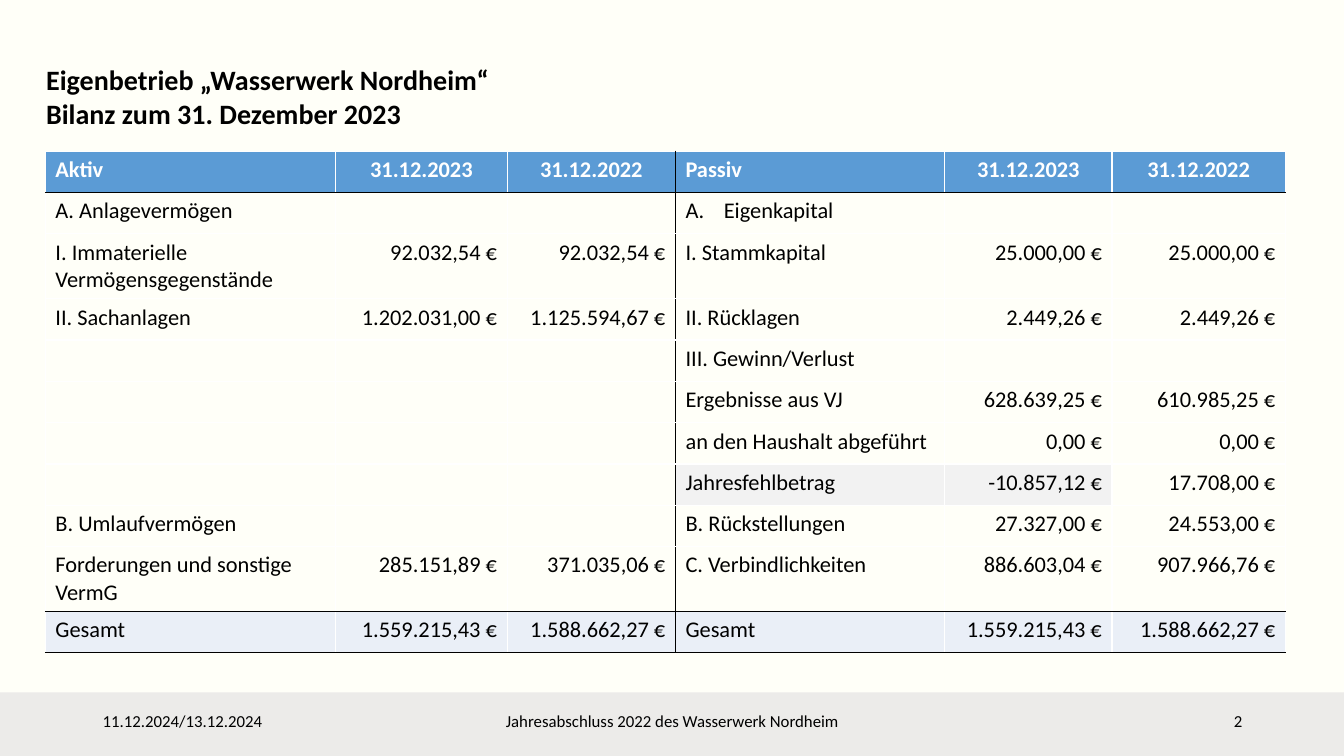
from lxml import etree
from pptx import Presentation
from pptx.dml.color import RGBColor
from pptx.enum.shapes import MSO_SHAPE
from pptx.enum.text import MSO_ANCHOR, MSO_AUTO_SIZE, PP_ALIGN
from pptx.oxml.ns import qn
from pptx.util import Inches, Pt

LEFT, CENTER, RIGHT = PP_ALIGN.LEFT, PP_ALIGN.CENTER, PP_ALIGN.RIGHT
TOP, MIDDLE = MSO_ANCHOR.TOP, MSO_ANCHOR.MIDDLE
GROW = MSO_AUTO_SIZE.SHAPE_TO_FIT_TEXT
RECTANGLE = MSO_SHAPE.RECTANGLE

COLORS = {
    "background": "FFFFF8",
    "footer": "E7E6E6",
    "header": "5B9BD5",
    "total": "EAEFF7",
    "highlight": "F2F2F2",
    "black": "000000",
    "white": "FFFFFF",
}
TITLE = ["Eigenbetrieb „Wasserwerk Nordheim“", "Bilanz zum 31. Dezember 2023"]
FOOTERS = [
    (0.92, 3, "11.12.2024/13.12.2024", LEFT),
    (4.42, 4.5, "Jahresabschluss 2022 des Wasserwerk Nordheim", CENTER),
    (9.42, 3, "2", RIGHT),
]
COL_WIDTHS = [2.88, 1.7, 1.67, 2.67, 1.66, 1.72]
ROW_HEIGHT = 0.41
LABEL_COLS = (0, 3)
PASSIV_COL = 3
NUMBERED_CELL = (1, 3)
HIGHLIGHT_CELLS = [(7, 3), (7, 4)]
BALANCE = [
    ["Aktiv", "31.12.2023", "31.12.2022", "Passiv", "31.12.2023", "31.12.2022"],
    ["A. Anlagevermögen", "", "", "Eigenkapital", "", ""],
    ["I. Immaterielle Vermögensgegenstände", "92.032,54 €", "92.032,54 €",
     "I. Stammkapital", "25.000,00 €", "25.000,00 €"],
    ["II. Sachanlagen", "1.202.031,00 €", "1.125.594,67 €",
     "II. Rücklagen", "2.449,26 €", "2.449,26 €"],
    ["", "", "", "III. Gewinn/Verlust", "", ""],
    ["", "", "", "Ergebnisse aus VJ", "628.639,25 €", "610.985,25 €"],
    ["", "", "", "an den Haushalt abgeführt", "0,00 €", "0,00 €"],
    ["", "", "", "Jahresfehlbetrag", "-10.857,12 €", "17.708,00 €"],
    ["B. Umlaufvermögen", "", "", "B. Rückstellungen", "27.327,00 €", "24.553,00 €"],
    ["Forderungen und sonstige VermG", "285.151,89 €", "371.035,06 €",
     "C. Verbindlichkeiten", "886.603,04 €", "907.966,76 €"],
    ["Gesamt", "1.559.215,43 €", "1.588.662,27 €",
     "Gesamt", "1.559.215,43 €", "1.588.662,27 €"],
]
LAST_ROW = len(BALANCE) - 1


def rgb(name):
    return RGBColor.from_string(COLORS[name])


def write(p, text, size, color="black", bold=False, align=LEFT):
    p.alignment = align
    r = p.add_run()
    r.text = text
    font_format = {"name": "Calibri", "size": Pt(size), "bold": bold}
    for key, value in font_format.items():
        setattr(r.font, key, value)
    r.font.color.rgb = rgb(color)


def add_text(s, box, lines, size, anchor=TOP, auto_size=None, **style):
    tf = s.shapes.add_textbox(*map(Inches, box)).text_frame
    frame_format = {"word_wrap": True, "vertical_anchor": anchor, "auto_size": auto_size}
    for key, value in frame_format.items():
        setattr(tf, key, value)
    for i, line in enumerate(lines):
        p = tf.add_paragraph() if i else tf.paragraphs[0]
        write(p, line, size, **style)


def add_footer_band(s):
    sp = s.shapes.add_shape(RECTANGLE, 0, Inches(6.87), Inches(13.33), Inches(0.63))
    sp.shadow.inherit = False
    sp.line.fill.background()
    sp.fill.solid()
    sp.fill.fore_color.rgb = rgb("footer")
    color = sp.fill._xPr.find(qn("a:solidFill"))[0]
    etree.SubElement(color, qn("a:alpha"), val="78000")


def set_borders(cell, row, col):
    black_sides = {
        "L": col == PASSIV_COL,
        "R": col == PASSIV_COL - 1,
        "T": row in (1, LAST_ROW),
        "B": row in (0, LAST_ROW - 1, LAST_ROW),
    }
    tc_pr = cell._tc.get_or_add_tcPr()
    for side, is_black in black_sides.items():
        line = etree.SubElement(tc_pr, qn(f"a:ln{side}"), w=str(Pt(1)))
        fill = etree.SubElement(line, qn("a:solidFill"))
        color = COLORS["black" if is_black else "white"]
        etree.SubElement(fill, qn("a:srgbClr"), val=color)


def set_fill(cell, row, col):
    name = {0: "header", LAST_ROW: "total"}.get(row)
    if (row, col) in HIGHLIGHT_CELLS:
        name = "highlight"
    if name:
        cell.fill.solid()
        cell.fill.fore_color.rgb = rgb(name)
    else:
        cell.fill.background()


def add_numbering(p):
    p_pr = p._p.get_or_add_pPr()
    indent = Inches(0.38)
    p_pr.set("marL", str(indent))
    p_pr.set("indent", str(-indent))
    etree.SubElement(p_pr, qn("a:buAutoNum"), type="alphaUcPeriod")


def add_balance_table(s):
    rows, cols = len(BALANCE), len(COL_WIDTHS)
    table = s.shapes.add_table(rows, cols, Inches(0.45), Inches(1.5),
                               Inches(sum(COL_WIDTHS)), Inches(ROW_HEIGHT * rows)).table
    table.horz_banding = False
    for column, width in zip(table.columns, COL_WIDTHS):
        column.width = Inches(width)
    for row, texts in enumerate(BALANCE):
        table.rows[row].height = Inches(ROW_HEIGHT)
        is_header = row == 0
        for col, text in enumerate(texts):
            cell = table.cell(row, col)
            set_borders(cell, row, col)
            set_fill(cell, row, col)
            if not text:
                continue
            p = cell.text_frame.paragraphs[0]
            if (row, col) == NUMBERED_CELL:
                add_numbering(p)
            value_align = CENTER if is_header else RIGHT
            write(p, text, 16, "white" if is_header else "black", is_header,
                  LEFT if col in LABEL_COLS else value_align)


def main():
    prs = Presentation()
    prs.slide_width, prs.slide_height = Inches(13.33), Inches(7.5)
    s = prs.slides.add_slide(prs.slide_layouts[6])
    s.background.fill.solid()
    s.background.fill.fore_color.rgb = rgb("background")

    # Footer
    add_footer_band(s)
    for left, width, text, align in FOOTERS:
        add_text(s, (left, 6.95, width, 0.4), [text], 12, MIDDLE, align=align)

    # Balance sheet and title
    add_balance_table(s)
    add_text(s, (0.36, 0.57, 7.56, 0.77), TITLE, 20, auto_size=GROW, bold=True)

    prs.save("out.pptx")


if __name__ == "__main__":
    main()
